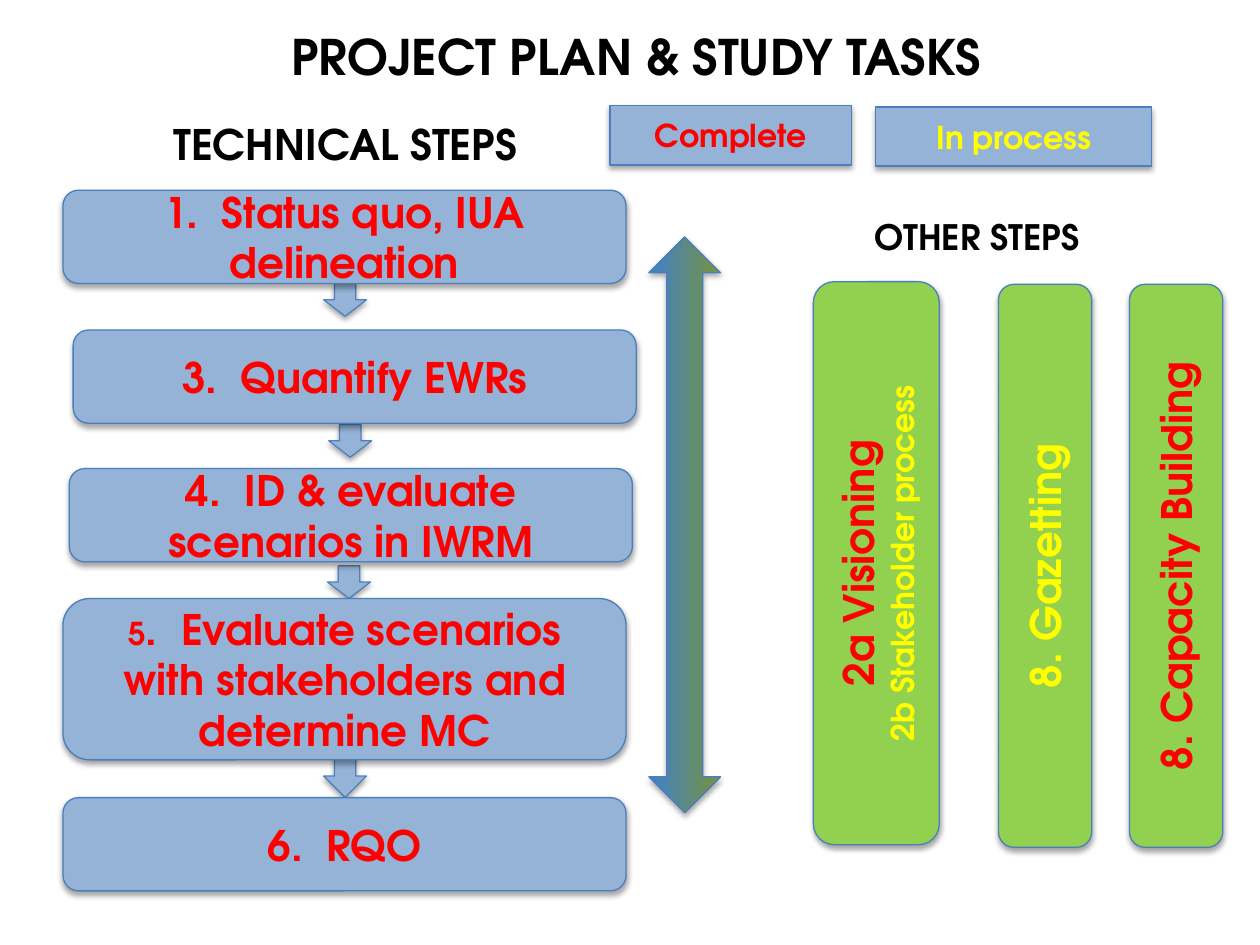
from lxml.etree import SubElement
from pptx import Presentation
from pptx.dml.color import RGBColor
from pptx.enum.shapes import MSO_SHAPE
from pptx.enum.text import MSO_ANCHOR, PP_ALIGN
from pptx.oxml.ns import qn
from pptx.util import Pt

FONT = "TeX Gyre Adventor"
BLACK, RED, YELLOW = "000000", "FF0000", "FFFF00"
BLUE, GREEN, OUTLINE, ARROW_OUTLINE = "95B3D7", "92D050", "4B7EBC", "4F81BD"

BAR_LENGTH, BAR_DEPTH = 321.8, 53.3
ARROW_WIDTH = 24.5

# Each paragraph is a list of (text, size, colour) runs.
# text, size, (left, top, width, height)
HEADINGS = [
    ("PROJECT PLAN & STUDY TASKS", 28, (36, 11.5, 655.2, 41)),
    ("TECHNICAL STEPS", 24, (79.2, 64.1, 236.2, 36)),
    ("OTHER STEPS", 20, (457.9, 119.5, 200.9, 31.7)),
]
# left, top, height, runs
TECHNICAL_STEPS = [
    (36, 108.7, BAR_DEPTH, [("1.  Status quo, IUA delineation", 24, RED)]),
    (41.8, 188.6, BAR_DEPTH, [("3.  Quantify EWRs", 24, RED)]),
    (39.6, 267.8, BAR_DEPTH, [("4.  ID & evaluate scenarios in IWRM", 24, RED)]),
    (36, 342, 92.2, [("5", 18, RED),
                     (".  Evaluate scenarios with stakeholders and determine MC", 24, RED)]),
    (36, 455.8, BAR_DEPTH, [("6.  RQO", 24, RED)]),
]
# left, top, height
STEP_ARROWS = [(185, 162, 18.7), (187.9, 242.6, 18.7), (187.2, 323.3, 18.7), (185, 419, 36.7)]
# centre x, centre y, depth, paragraphs
OTHER_STEPS = [
    (500.8, 321.8, 72, [[("2a Visioning", 24, RED)], [("2b Stakeholder process", 18, YELLOW)]]),
    (597.2, 323.3, BAR_DEPTH, [[("8. Gazetting", 24, YELLOW)]]),
    (672.1, 323.3, BAR_DEPTH, [[("8. Capacity Building", 24, RED)]]),
]
LEGEND = [
    ("Complete", RED, (348.5, 60.5, 138.2, 33.8)),
    ("In process", YELLOW, (500.4, 61.2, 157.7, 33.8)),
]
LINK_ARROW = (370.8, 135.4, 41, 329)
LINK_COLOURS = ["3F80CE", "77933C"]


def rgb(colour):
    return RGBColor.from_string(colour)


def write(shape, paragraphs):
    frame = shape.text_frame
    frame.word_wrap = True
    for number, runs in enumerate(paragraphs):
        paragraph = frame.add_paragraph() if number else frame.paragraphs[0]
        paragraph.alignment = PP_ALIGN.CENTER
        for text, size, colour in runs:
            run = paragraph.add_run()
            run.text = text
            run.font.name = FONT
            run.font.size = Pt(size)
            run.font.bold = True
            run.font.color.rgb = rgb(colour)


def add_shadow(shape):
    shape.shadow.inherit = False
    effects = shape._element.spPr.find(qn("a:effectLst"))
    shadow = SubElement(effects, qn("a:outerShdw"), blurRad=str(Pt(3.1)), dist=str(Pt(1.8)),
                        dir="5400000", rotWithShape="0")
    colour = SubElement(shadow, qn("a:srgbClr"), val=BLACK)
    SubElement(colour, qn("a:alpha"), val="35000")


def add_block(kind, box, fill, paragraphs=(), outline=OUTLINE):
    block = slide.shapes.add_shape(kind, *map(Pt, box))
    block.fill.solid()
    block.fill.fore_color.rgb = rgb(fill)
    block.line.color.rgb = rgb(outline)
    block.line.width = Pt(0.75)
    add_shadow(block)
    block.text_frame.vertical_anchor = MSO_ANCHOR.MIDDLE
    write(block, paragraphs)
    return block


presentation = Presentation()
presentation.slide_width, presentation.slide_height = Pt(720), Pt(540)
slide = presentation.slides.add_slide(presentation.slide_layouts[6])

for text, size, box in HEADINGS:
    write(slide.shapes.add_textbox(*map(Pt, box)), [[(text, size, BLACK)]])

for left, top, height in STEP_ARROWS:
    add_block(MSO_SHAPE.DOWN_ARROW, (left, top, ARROW_WIDTH, height), BLUE, outline=ARROW_OUTLINE)

for left, top, height, runs in TECHNICAL_STEPS:
    add_block(MSO_SHAPE.ROUNDED_RECTANGLE, (left, top, BAR_LENGTH, height), BLUE, [runs])

for centre_x, centre_y, depth, paragraphs in OTHER_STEPS:
    box = (centre_x - BAR_LENGTH / 2, centre_y - depth / 2, BAR_LENGTH, depth)
    add_block(MSO_SHAPE.ROUNDED_RECTANGLE, box, GREEN, paragraphs).rotation = 270

for text, colour, box in LEGEND:
    add_block(MSO_SHAPE.RECTANGLE, box, BLUE, [[(text, 18, colour)]])

link = add_block(MSO_SHAPE.UP_DOWN_ARROW, LINK_ARROW, BLUE)
link.fill.gradient()
link.fill.gradient_angle = 0
for stop, colour in zip(link.fill.gradient_stops, LINK_COLOURS):
    stop.color.rgb = rgb(colour)

presentation.save("out.pptx")
